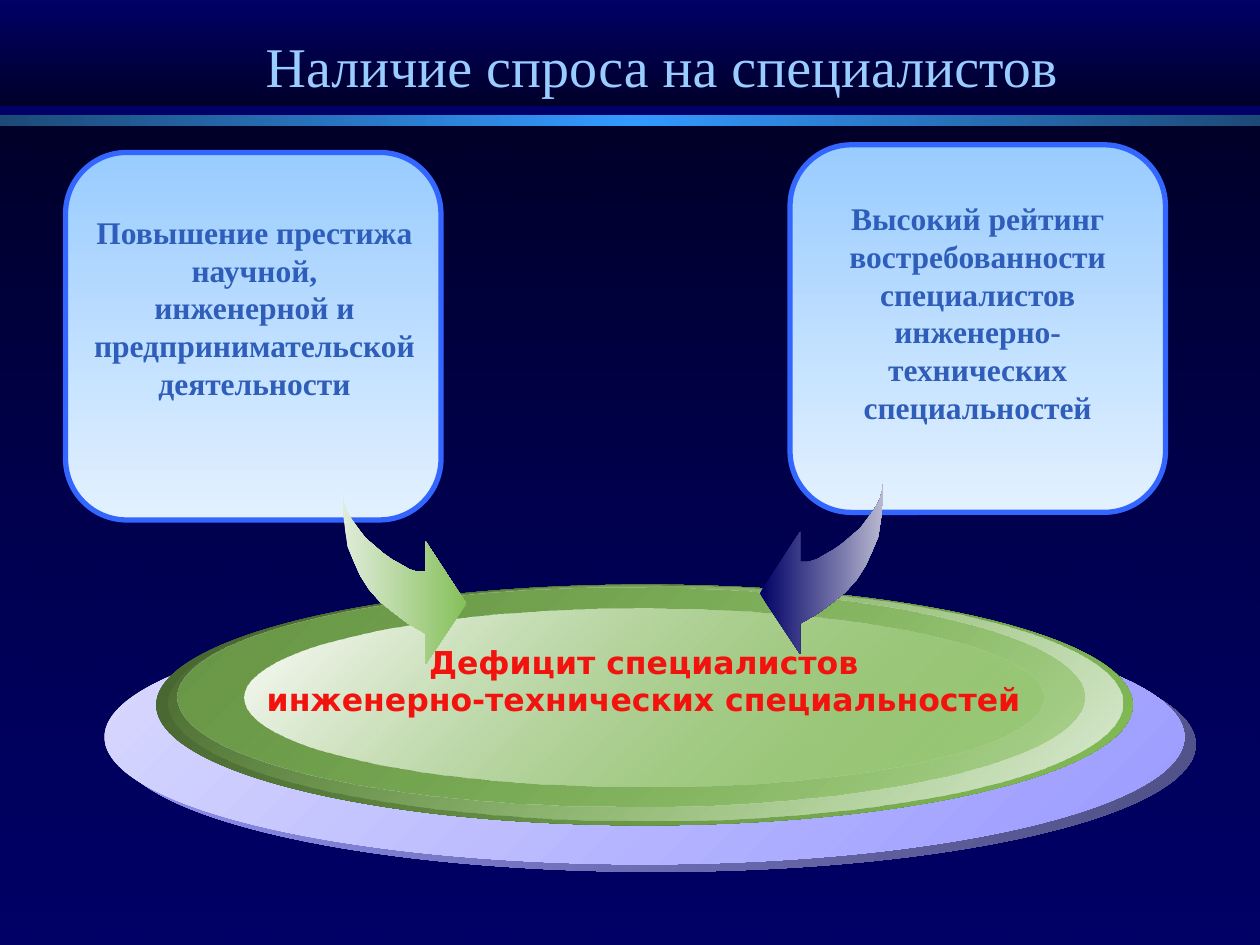
from dataclasses import dataclass

from lxml.etree import SubElement
from pptx import Presentation
from pptx.dml.color import RGBColor
from pptx.enum.shapes import MSO_SHAPE
from pptx.enum.text import MSO_ANCHOR, PP_ALIGN
from pptx.oxml.ns import qn
from pptx.util import Inches, Pt

SLIDE_WIDTH, SLIDE_HEIGHT = Inches(10), Inches(7.5)


@dataclass(frozen=True)
class Theme:
    background: str = "000066"
    night: str = "00002A"
    bar_edge: str = "1C4A78"
    bar_middle: str = "3399FF"
    sky: str = "99CCFF"
    pale_sky: str = "E3F1FF"
    card_line: str = "3366FF"
    card_text: str = "2F5DBA"
    alert: str = "F2130E"
    lilac: str = "9999FF"
    pale_lilac: str = "DADAFF"
    dark_lilac: str = "4C4C80"
    green: str = "86C05A"
    dark_green: str = "435F2D"
    leaf: str = "6A9848"
    pale_green: str = "E0ECDA"
    silver: str = "B8B8D0"
    white: str = "FFFFFF"
    serif: str = "Times New Roman"
    sans: str = "DejaVu Sans"
    title_size: int = 32
    body_size: int = 18


THEME = Theme()

# Hundredths of an inch, from the tail round the head and back.
ARROW_OUTLINE = [
    (0, 0), (0, 15), (2, 30), (4, 43), (9, 55), (14, 66), (21, 77), (30, 87),
    (40, 95), (52, 104), (66, 112), (66, 136), (98, 88), (66, 39), (66, 63),
    (60, 63), (53, 61), (46, 57), (39, 53), (32, 48), (25, 42), (18, 36),
    (12, 28), (7, 21), (3, 14), (1, 7),
]
ARROW_WIDTH = 99


def place(left, top, width, height):
    """Turn percentages of the slide into lengths."""
    return (
        round(SLIDE_WIDTH * left / 100), round(SLIDE_HEIGHT * top / 100),
        round(SLIDE_WIDTH * width / 100), round(SLIDE_HEIGHT * height / 100),
    )


def fill_gradient(shape, angle, *stops):
    """Fill with (colour, opacity percent) stops, evenly spread."""
    shape.shadow.inherit = False
    shape.fill.gradient()
    shape.fill.gradient_angle = -angle % 360
    stop_list = shape._element.spPr.find(qn("a:gradFill")).find(qn("a:gsLst"))
    stop_list.clear()
    for index, (colour, opacity) in enumerate(stops):
        position = 100000 * index // (len(stops) - 1)
        stop = SubElement(stop_list, qn("a:gs"), pos=str(position))
        colour_element = SubElement(stop, qn("a:srgbClr"), val=colour)
        if opacity < 100:
            SubElement(colour_element, qn("a:alpha"), val=str(opacity * 1000))


def add_gradient_shape(shapes, kind, box, angle, *stops):
    shape = shapes.add_shape(kind, *place(*box))
    fill_gradient(shape, angle, *stops)
    shape.line.fill.background()
    return shape


def write_text(shape, lines, font_name, size, colour, bold=True,
               alignment=PP_ALIGN.CENTER, wrap=True):
    text_frame = shape.text_frame
    text_frame.word_wrap = wrap
    text_frame.text = "\n".join(lines)
    for paragraph in text_frame.paragraphs:
        paragraph.alignment = alignment
        for run in paragraph.runs:
            run.font.name = font_name
            run.font.size = Pt(size)
            run.font.bold = bold
            run.font.color.rgb = RGBColor.from_string(colour)


def add_backdrop(slide):
    slide.background.fill.solid()
    slide.background.fill.fore_color.rgb = RGBColor.from_string(THEME.background)
    bands = [
        ((0, 0, 100, 11.2), 90, (THEME.background, 100), (THEME.night, 100)),
        ((0, 13.2, 100, 86.8), 90, (THEME.night, 100), (THEME.background, 48)),
        ((0, 12.2, 100, 1.1), 0, (THEME.bar_edge, 100),
         (THEME.bar_middle, 100), (THEME.bar_edge, 100)),
    ]
    for box, angle, *stops in bands:
        add_gradient_shape(slide.shapes, MSO_SHAPE.RECTANGLE, box, angle, *stops)


def add_card(slide, left, top):
    card = add_gradient_shape(
        slide.shapes, MSO_SHAPE.ROUNDED_RECTANGLE, (left, top, 29.8, 38.9), 90,
        (THEME.sky, 100), (THEME.pale_sky, 100))
    card.line.color.rgb = RGBColor.from_string(THEME.card_line)
    card.line.width = Pt(3)


def add_card_text(slide, box, lines):
    text_box = slide.shapes.add_textbox(*place(*box))
    write_text(text_box, lines, THEME.serif, THEME.body_size, THEME.card_text)


def add_platform(slide, lines):
    """Stack the ellipses from back to front and label the top one."""
    group = slide.shapes.add_group_shape()
    layers = [
        ((9.2, 65.33, 85.7, 26.93), (THEME.lilac, 100), (THEME.dark_lilac, 100)),
        ((8.3, 64.53, 85.7, 26.93), (THEME.pale_lilac, 100), (THEME.lilac, 100)),
        ((12.4, 61.87, 77.5, 25.47), (THEME.dark_green, 100), (THEME.green, 100)),
        ((13.4, 62, 75.7, 24.8), (THEME.green, 0), (THEME.pale_green, 100)),
        ((14.1, 62.13, 72, 23.2), (THEME.leaf, 100), (THEME.green, 48)),
        ((19.4, 64.4, 63.4, 18.8), (THEME.white, 100), (THEME.green, 38)),
    ]
    for box, *stops in layers:
        ellipse = add_gradient_shape(
            group.shapes, MSO_SHAPE.OVAL, box, 45, *stops)
    write_text(ellipse, lines, THEME.sans, THEME.body_size, THEME.alert, wrap=False)
    ellipse.text_frame.vertical_anchor = MSO_ANCHOR.MIDDLE
    ellipse.text_frame.margin_bottom = Inches(0.32)


def add_arrow(slide, left, top, start, end, mirrored=False):
    points = [(ARROW_WIDTH - x if mirrored else x, y) for x, y in ARROW_OUTLINE]
    builder = slide.shapes.build_freeform(*points[0], scale=Inches(0.01))
    builder.add_line_segments(points[1:], close=True)
    origin_left, origin_top, *_ = place(left, top, 0, 0)
    arrow = builder.convert_to_shape(origin_left, origin_top)
    fill_gradient(arrow, 0, (start, 100), (end, 100))
    arrow.line.fill.background()


def add_title(slide, title):
    text_box = slide.shapes.add_textbox(*place(20.1, 2.67, 65.6, 8.53))
    write_text(text_box, [title], THEME.serif, THEME.title_size, THEME.sky,
               bold=False, alignment=PP_ALIGN.LEFT, wrap=False)


def main():
    presentation = Presentation()
    presentation.slide_width, presentation.slide_height = SLIDE_WIDTH, SLIDE_HEIGHT
    slide = presentation.slides.add_slide(presentation.slide_layouts[6])

    add_backdrop(slide)
    add_card(slide, 62.7, 15.33)
    add_card(slide, 5.2, 16.13)
    add_card_text(slide, (63.8, 20.4, 27.6, 28.67), [
        "Высокий рейтинг востребованности специалистов",
        "инженерно-технических специальностей"])
    add_platform(slide, [
        "Дефицит специалистов", "инженерно-технических специальностей"])
    add_card_text(slide, (6.4, 21.87, 27.6, 21.6), [
        "Повышение престижа научной,",
        "инженерной и предпринимательской деятельности"])
    add_title(slide, "Наличие спроса на специалистов")
    add_arrow(slide, 27.2, 52.13, THEME.pale_green, THEME.green)
    add_arrow(slide, 60.2, 51.07, THEME.background, THEME.silver, mirrored=True)
    presentation.save("out.pptx")


if __name__ == "__main__":
    main()
